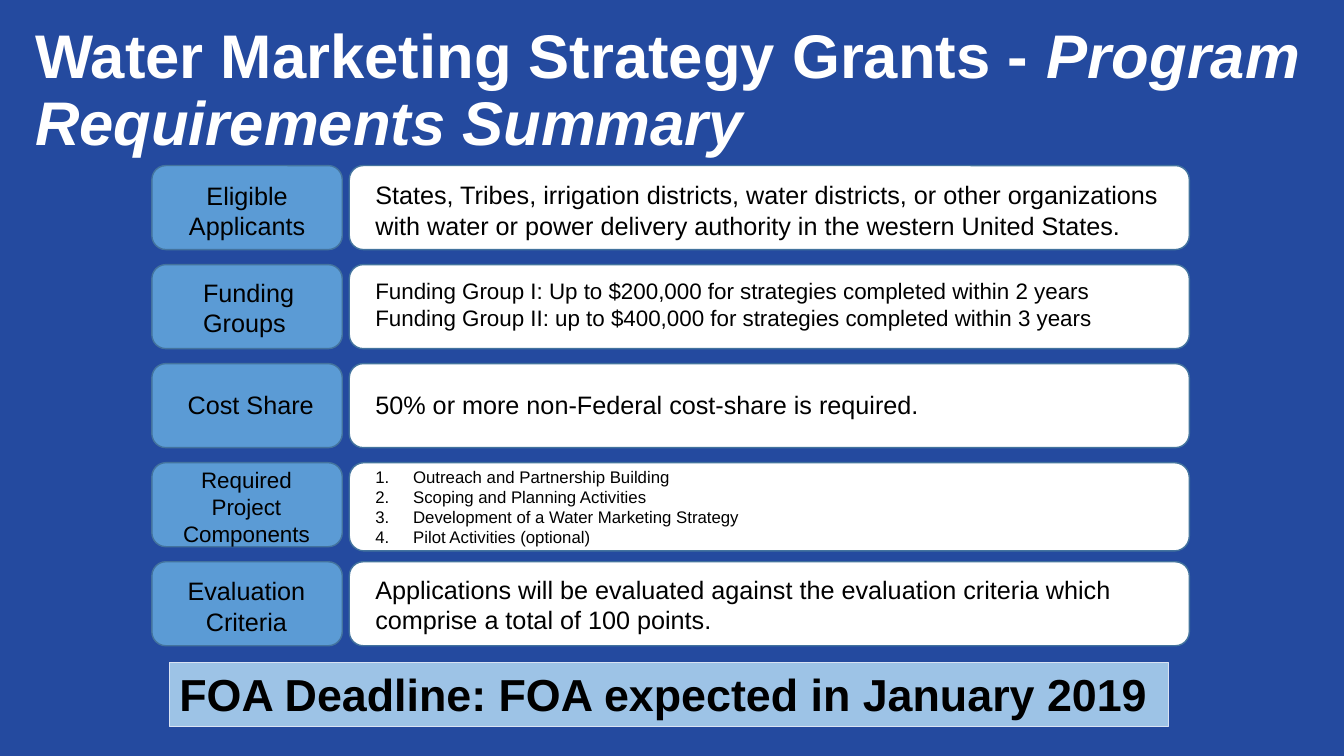
import pptx
import pptx.util
import pptx.dml.color
import pptx.enum.shapes
import pptx.enum.text
import pptx.oxml.ns
import lxml.etree

Pt = pptx.util.Pt
SHAPE = pptx.enum.shapes.MSO_SHAPE
ALIGN = pptx.enum.text.PP_ALIGN
ANCHOR = pptx.enum.text.MSO_ANCHOR
FIT = pptx.enum.text.MSO_AUTO_SIZE

COLORS = {
    "background": "244A9F",
    "white": "FFFFFF",
    "black": "000000",
    "label": "5B9BD5",
    "outline": "43739E",
    "deadline": "9DC3E6",
    "deadline_line": "DAE3F3",
}


def rgb(name):
    return pptx.dml.color.RGBColor.from_string(COLORS[name])


class SlideBuilder:
    font = "Arial"

    def __init__(self, prs):
        self.s = prs.slides.add_slide(prs.slide_layouts[6])
        fill = self.s.background.fill
        fill.solid()
        fill.fore_color.rgb = rgb("background")

    def paint(self, sp, fill, line=None, width=1):
        sp.fill.solid()
        sp.fill.fore_color.rgb = rgb(fill)
        if line:
            sp.line.color.rgb = rgb(line)
            sp.line.width = Pt(width)

    def panel(self, box, fill):
        sp = self.s.shapes.add_shape(SHAPE.ROUNDED_RECTANGLE, *map(Pt, box))
        sp.shadow.inherit = False
        self.paint(sp, fill, "outline")

    def number(self, p):
        pPr = p._p.get_or_add_pPr()
        pPr.set("marL", str(Pt(27)))
        pPr.set("indent", str(-Pt(27)))
        bu = lxml.etree.SubElement(pPr, pptx.oxml.ns.qn("a:buAutoNum"))
        bu.set("type", "arabicPeriod")

    def text(self, box, paragraphs, size, color="black", align=ALIGN.LEFT,
             numbered=False, bold=False, **frame):
        sp = self.s.shapes.add_textbox(*map(Pt, box))
        tf = sp.text_frame
        settings = {"word_wrap": True, "auto_size": FIT.SHAPE_TO_FIT_TEXT}
        for key, value in {**settings, **frame}.items():
            setattr(tf, key, value)
        for i, line in enumerate(paragraphs):
            p = tf.add_paragraph() if i else tf.paragraphs[0]
            p.alignment = align
            if numbered:
                self.number(p)
            for words, italic in [(line, False)] if isinstance(line, str) else line:
                r = p.add_run()
                r.text = words
                style = {"name": self.font, "size": Pt(size), "bold": bold, "italic": italic}
                for key, value in style.items():
                    setattr(r.font, key, value)
                r.font.color.rgb = rgb(color)
        return sp

    def title(self, box, runs):
        sp = self.text(box, [runs], 44, "white", bold=True,
                       auto_size=FIT.NONE, vertical_anchor=ANCHOR.MIDDLE)
        sp.text_frame.paragraphs[0].line_spacing = 0.9

    def row(self, top, label, body):
        x, dy, w, h, size, align, words = label
        self.panel((108.5, top, 136, 60), "label")
        self.text((x, top + dy, w, h), [words], size, align=align)
        dy, w, h, size, panel_h, numbered, lines = body
        self.panel((249.5, top, 600, panel_h), "white")
        self.text((261, top + dy, w, h), lines, size, numbered=numbered)

    def deadline(self, box, words):
        sp = self.text(box, [words], 32, bold=True)
        self.paint(sp, "deadline", "deadline_line", 0.75)


ROWS = [
    ((126, 7, 101, 46, 18, ALIGN.CENTER, "Eligible Applicants"),
     (6.5, 577, 46, 18, 60, False,
      ["States, Tribes, irrigation districts, water districts, or other organizations "
       "with water or power delivery authority in the western United States."])),
    ((138, 5.5, 84, 46, 18, ALIGN.LEFT, "Funding Groups"),
     (5.5, 577, 45, 16, 60, False,
      ["Funding Group I: Up to $200,000 for strategies completed within 2 years",
       "Funding Group II: up to $400,000 for strategies completed within 3 years"])),
    ((127, 15, 107, 26, 18, ALIGN.LEFT, "Cost Share"),
     (15, 481, 29, 18, 60, False,
      ["50% or more non-Federal cost-share is required."])),
    ((121, -1, 110, 65.5, 16, ALIGN.CENTER, "Required Project Components"),
     (-1, 349, 65.5, 12, 63, True,
      ["Outreach and Partnership Building",
       "Scoping and Planning Activities",
       "Development of a Water Marketing Strategy",
       "Pilot Activities (optional)"])),
    ((121, 6.5, 110, 47, 18, ALIGN.CENTER, "Evaluation Criteria"),
     (5.5, 577, 47, 18, 60, False,
      ["Applications will be evaluated against the evaluation criteria which "
       "comprise a total of 100 points."])),
]


def main():
    prs = pptx.Presentation()
    prs.slide_width, prs.slide_height = Pt(960), Pt(540)
    slide = SlideBuilder(prs)
    slide.title((18, 13.5, 921.5, 104.5),
                [("Water Marketing Strategy Grants - ", False),
                 ("Program Requirements Summary", True)])
    for i, (label, body) in enumerate(ROWS):
        slide.row(118.25 + 70.75 * i, label, body)
    slide.deadline((121, 473, 713.5, 46),
                   "FOA Deadline: FOA expected in January 2019")
    prs.save("out.pptx")


if __name__ == "__main__":
    main()
